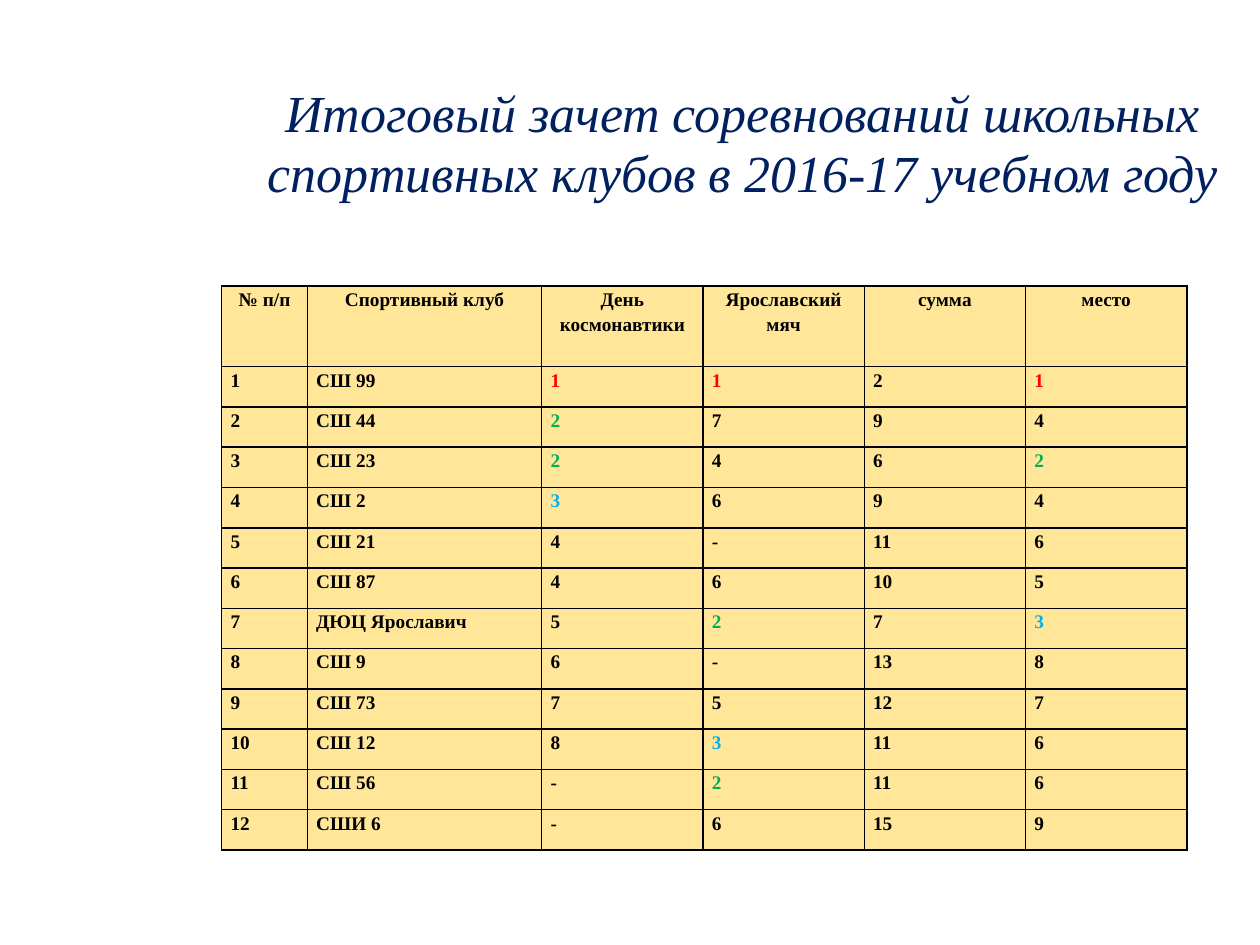
"""Build the slide with the final standings of the school sports clubs."""
from typing import NamedTuple

from lxml import etree
from pptx import Presentation
from pptx.dml.color import RGBColor
from pptx.enum.text import MSO_ANCHOR, PP_ALIGN
from pptx.oxml.ns import qn
from pptx.util import Inches, Pt

CENTER, LEFT = PP_ALIGN.CENTER, PP_ALIGN.LEFT
MIDDLE = MSO_ANCHOR.MIDDLE

NAVY = RGBColor(0x00, 0x20, 0x60)
BLACK = RGBColor(0x00, 0x00, 0x00)
SAND = RGBColor(0xFF, 0xE6, 0x99)
RED = RGBColor(0xFF, 0x00, 0x00)
GREEN = RGBColor(0x00, 0xB0, 0x50)
BLUE = RGBColor(0x00, 0xB0, 0xF0)

FONT = "Times New Roman"
TITLE = "Итоговый зачет соревнований школьных спортивных клубов в 2016-17 учебном году"
HEADERS = ("№ п/п", "Спортивный клуб", "День космонавтики", "Ярославский мяч", "сумма", "место")
COLUMN_WIDTHS = (0.68, 1.86, 1.28, 1.28, 1.28, 1.28)
HEADER_HEIGHT, ROW_HEIGHT = 0.64, 0.32
PLACE_COLORS = {"1": RED, "2": GREEN, "3": BLUE}
PLACE_COLUMNS = (2, 3, 5)


class Club(NamedTuple):
    name: str
    space_day: str
    ball: str
    total: str
    place: str


CLUBS = (
    Club("СШ 99", "1", "1", "2", "1"),
    Club("СШ 44", "2", "7", "9", "4"),
    Club("СШ 23", "2", "4", "6", "2"),
    Club("СШ 2", "3", "6", "9", "4"),
    Club("СШ 21", "4", "-", "11", "6"),
    Club("СШ 87", "4", "6", "10", "5"),
    Club("ДЮЦ Ярославич", "5", "2", "7", "3"),
    Club("СШ 9", "6", "-", "13", "8"),
    Club("СШ 73", "7", "5", "12", "7"),
    Club("СШ 12", "8", "3", "11", "6"),
    Club("СШ 56", "-", "2", "11", "6"),
    Club("СШИ 6", "-", "6", "15", "9"),
)


def write(frame, text: str, *, size: float, color: RGBColor, align: PP_ALIGN,
          spacing: float, bold: bool = False, italic: bool = False) -> None:
    para = frame.paragraphs[0]
    para.alignment = align
    para.line_spacing = spacing
    span = para.add_run()
    span.text = text
    font = span.font
    font.name, font.size, font.bold, font.italic = FONT, Pt(size), bold, italic
    font.color.rgb = color


def add_borders(cell, color: RGBColor, width: float) -> None:
    properties = cell._tc.get_or_add_tcPr()
    for side in ("a:lnL", "a:lnR", "a:lnT", "a:lnB"):
        line = etree.SubElement(properties, qn(side), w=str(Pt(width)))
        fill = etree.SubElement(line, qn("a:solidFill"))
        etree.SubElement(fill, qn("a:srgbClr"), val=str(color))


def fill_cell(cell, text: str, color: RGBColor, align: PP_ALIGN) -> None:
    cell.margin_left = cell.margin_right = Inches(0.07)
    cell.margin_top = cell.margin_bottom = 0
    add_borders(cell, BLACK, 1)
    cell.fill.solid()
    cell.fill.fore_color.rgb = SAND
    write(cell.text_frame, text, size=11, color=color, align=align, spacing=1.15, bold=True)


def add_title(page) -> None:
    box = page.shapes.add_textbox(Inches(1.8), Inches(0.75), Inches(8.2), Inches(1.25))
    frame = box.text_frame
    frame.word_wrap = True
    frame.vertical_anchor = MIDDLE
    frame.margin_bottom = Inches(0.5)
    write(frame, TITLE, size=29.7, color=NAVY, align=CENTER, spacing=0.95, italic=True)


def add_standings(page) -> None:
    rows = [HEADERS] + [(str(number), *club) for number, club in enumerate(CLUBS, 1)]
    height = HEADER_HEIGHT + ROW_HEIGHT * len(CLUBS)
    table = page.shapes.add_table(len(rows), len(HEADERS), Inches(1.76), Inches(2.27),
                                  Inches(sum(COLUMN_WIDTHS)), Inches(height)).table
    for column, width in zip(table.columns, COLUMN_WIDTHS):
        column.width = Inches(width)
    for row_index, values in enumerate(rows):
        is_header = row_index == 0
        table.rows[row_index].height = Inches(HEADER_HEIGHT if is_header else ROW_HEIGHT)
        for column_index, text in enumerate(values):
            color = PLACE_COLORS.get(text, BLACK) if column_index in PLACE_COLUMNS else BLACK
            fill_cell(table.cell(row_index, column_index), text, color,
                      CENTER if is_header else LEFT)


def main() -> None:
    deck = Presentation()
    deck.slide_width, deck.slide_height = Inches(10), Inches(7.5)
    page = deck.slides.add_slide(deck.slide_layouts[6])
    add_title(page)
    add_standings(page)
    deck.save("out.pptx")


if __name__ == "__main__":
    main()
